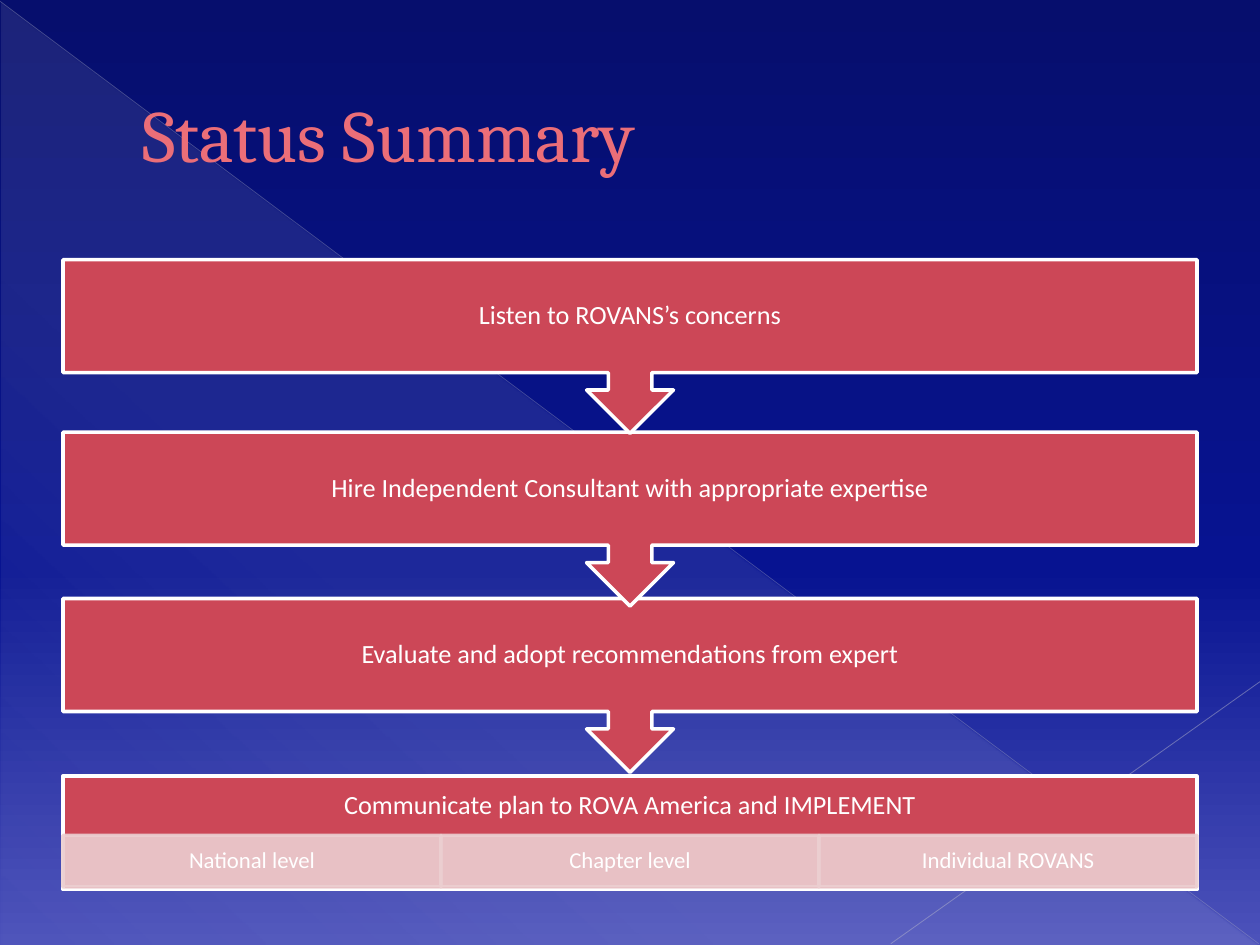
"""Build the Status Summary slide, a downward flow of four steps."""
from lxml.etree import SubElement
from pptx import Presentation
from pptx.dml.color import RGBColor
from pptx.enum.shapes import MSO_CONNECTOR, MSO_SHAPE
from pptx.enum.text import MSO_ANCHOR, PP_ALIGN
from pptx.oxml.ns import qn
from pptx.util import Inches, Pt

HEX = {
    "white": "FFFFFF", "red": "CC4757", "pink": "ECCFD1", "title": "EB6E78",
    "edge": "8D313C", "ray": "B1B2C7", "beam": "BABACD",
    "dark": "060E6D", "navy": "071391", "sky": "4C52BA",
}
STEPS = [
    (2.06, "Listen to ROVANS’s concerns"),
    (3.43, "Hire Independent Consultant with appropriate expertise"),
    (4.75, "Evaluate and adopt recommendations from expert"),
]
LEVELS = ["National level", "Chapter level", "Individual ROVANS"]
LEFT, WIDE = 0.5, 9


def rgb(name):
    """Return the named colour."""
    return RGBColor.from_string(HEX[name])


def apply(item, form):
    """Set each attribute of the item from a dict."""
    for key, value in form.items():
        setattr(item, key, value)


def fade(node, alpha):
    """Give every colour below the node an opacity in percent."""
    for color in node.iter(qn("a:srgbClr")):
        SubElement(color, qn("a:alpha"), val=str(alpha * 1000))


def ramp(fill, node, angle, stops):
    """Fill with a linear gradient of (place, colour, opacity) stops."""
    fill.gradient()
    fill.gradient_angle = 360 - angle
    group = next(node.iter(qn("a:gsLst")))
    group.clear()
    for place, name, alpha in stops:
        stop = SubElement(group, qn("a:gs"), pos=str(place * 1000))
        SubElement(stop, qn("a:srgbClr"), val=HEX[name])
        fade(stop, alpha)


def shape(slide, kind, box, fill=None, line=None, alpha=100):
    """Add a flat preset shape with an optional fill and line."""
    item = slide.shapes.add_shape(kind, *map(Inches, box))
    item.shadow.inherit = False
    if fill:
        item.fill.solid()
        item.fill.fore_color.rgb = rgb(fill)
    if line:
        item.line.color.rgb = rgb(line)
        item.line.width = Pt(2)
    else:
        item.line.fill.background()
    if alpha < 100:
        fade(item._element.spPr, alpha)
    return item


def ray(slide, start, end, name, width, alpha):
    """Add a thin translucent line."""
    item = slide.shapes.add_connector(
        MSO_CONNECTOR.STRAIGHT, *map(Inches, start + end))
    item.line.color.rgb = rgb(name)
    item.line.width = Pt(width)
    fade(item._element.spPr, alpha)
    SubElement(item._element.spPr, qn("a:effectLst"))


def write(item, text, size, inset):
    """Put centred white text in a shape."""
    frame = item.text_frame
    sides = ("left", "top", "right", "bottom")
    apply(frame, {f"margin_{side}": Inches(inset) for side in sides})
    apply(frame, {"word_wrap": True, "vertical_anchor": MSO_ANCHOR.MIDDLE})
    para = frame.paragraphs[0]
    apply(para, {"alignment": PP_ALIGN.CENTER, "line_spacing": 0.9})
    run = para.add_run()
    run.text = text
    apply(run.font, {"size": Pt(size), "name": "Calibri"})
    run.font.color.rgb = rgb("white")


def label(slide, box, text):
    """Add the text of a step."""
    write(slide.shapes.add_textbox(*map(Inches, box)), text, 15, 0.12)


def scene(slide):
    """Draw the background, the light wedge and its rays."""
    ramp(slide.background.fill, slide.element, 90,
         [(0, "dark", 100), (60, "navy", 100), (100, "sky", 100)])
    wedge = shape(slide, MSO_SHAPE.RIGHT_TRIANGLE, (0.01, 0.02, 9.98, 7.48))
    ramp(wedge.fill, wedge._element, 133,
         [(0, "white", 10), (70, "white", 8), (100, "white", 1)])
    ray(slide, (0, 0.01), (9.99, 7.49), "ray", 0.39, 35)
    ray(slide, (10, 5.41), (7.07, 7.49), "beam", 0.47, 45)


def title(slide, text):
    """Add the outlined title."""
    box = slide.shapes.add_textbox(*map(Inches, (LEFT, 0.29, WIDE, 1.53)))
    frame = box.text_frame
    apply(frame, {"word_wrap": True, "vertical_anchor": MSO_ANCHOR.MIDDLE})
    para = frame.paragraphs[0]
    para._p.get_or_add_pPr().set("marL", str(Inches(0.53)))
    run = para.add_run()
    run.text = text
    apply(run.font, {"size": Pt(42), "name": "Cambria"})
    run.font.color.rgb = rgb("title")
    props = run._r.get_or_add_rPr()
    line = SubElement(props, qn("a:ln"), w=str(Pt(0.5)))
    fill = SubElement(line, qn("a:solidFill"))
    SubElement(fill, qn("a:srgbClr"), val=HEX["edge"])
    props.insert(0, line)


def final(slide, top, text):
    """Add the last step with its row of levels."""
    shape(slide, MSO_SHAPE.RECTANGLE, (LEFT, top, WIDE, 0.9), "red", "white")
    label(slide, (LEFT, top, WIDE, 0.48), text)
    width = WIDE / len(LEVELS)
    for col, name in enumerate(LEVELS):
        box = (LEFT + col * width, top + 0.47, width, 0.41)
        cell = shape(slide, MSO_SHAPE.RECTANGLE, box, "pink", "pink", 90)
        write(cell, name, 13, 0.1)


def step(slide, top, text):
    """Add a step whose arrow points down to the next."""
    item = shape(slide, MSO_SHAPE.UP_ARROW_CALLOUT,
                 (LEFT, top, WIDE, 1.38), "red", "white")
    item.rotation = 180
    label(slide, (LEFT, top, WIDE, 0.9), text)


def main():
    """Build and save the slide."""
    deck = Presentation()
    apply(deck, {"slide_width": Inches(10), "slide_height": Inches(7.5)})
    slide = deck.slides.add_slide(deck.slide_layouts[6])
    scene(slide)
    title(slide, "Status Summary")
    final(slide, 6.16, "Communicate plan to ROVA America and IMPLEMENT")
    for top, text in reversed(STEPS):
        step(slide, top, text)
    deck.save("out.pptx")


if __name__ == "__main__":
    main()
